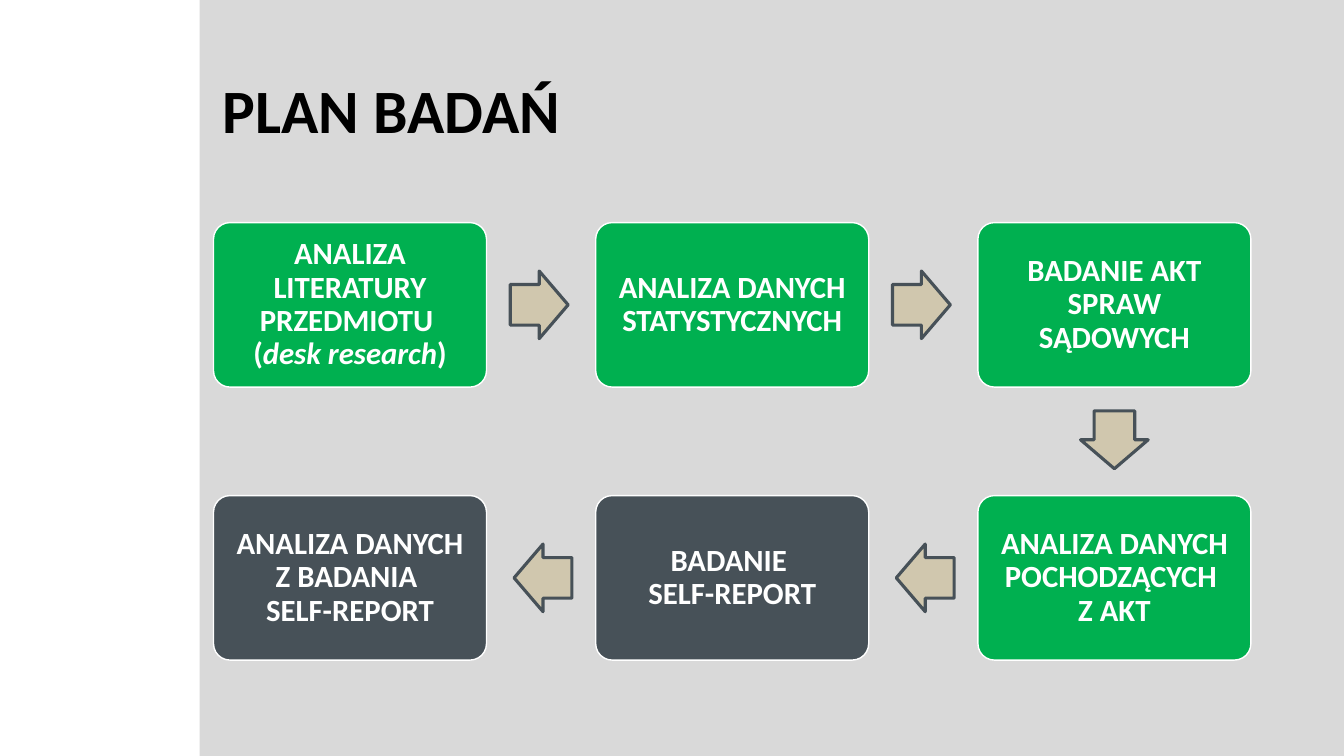
"""Build the research plan slide: six steps in a winding flow."""
from itertools import pairwise

from pptx import Presentation
from pptx.dml.color import RGBColor
from pptx.enum.shapes import MSO_SHAPE
from pptx.enum.text import MSO_ANCHOR, MSO_AUTO_SIZE, PP_ALIGN
from pptx.util import Pt

TITLE = "PLAN BADAŃ"
GREEN, SLATE, SAND = "00B050", "475158", "D0C7AE"
WHITE, BLACK, GREY = "FFFFFF", "000000", "D9D9D9"
ITALIC = "desk research"
STEPS = [
    (0, 0, GREEN, ["ANALIZA LITERATURY PRZEDMIOTU ", "\n", "(", ITALIC, ")"]),
    (1, 0, GREEN, ["ANALIZA DANYCH STATYSTYCZNYCH"]),
    (2, 0, GREEN, ["BADANIE AKT SPRAW SĄDOWYCH"]),
    (2, 1, GREEN, ["ANALIZA DANYCH POCHODZĄCYCH ", "\n", "Z AKT"]),
    (1, 1, SLATE, ["BADANIE ", "\n", "SELF-REPORT"]),
    (0, 1, SLATE, ["ANALIZA DANYCH Z BADANIA ", "\n", "SELF-REPORT"]),
]

PAGE_WIDTH, PAGE_HEIGHT, PANEL_LEFT = 960, 540, 142.6
LEFT, TOP, COLUMN_STEP, ROW_STEP = 152.5, 159, 273, 195
BOX_WIDTH, BOX_HEIGHT = 195, 117.5
ARROW_LENGTH, ARROW_WIDTH, ARROW_GAP = 41.3, 48.3, 17
ROTATIONS = {(1, 0): 0, (0, 1): 90, (-1, 0): 180}


def color(value):
    return RGBColor.from_string(value)


def add_block(page, kind, left, top, width, height, fill, line=None, weight=1):
    block = page.shapes.add_shape(kind, Pt(left), Pt(top), Pt(width), Pt(height))
    block.shadow.inherit = False
    block.fill.solid()
    block.fill.fore_color.rgb = color(fill)
    if line:
        block.line.color.rgb = color(line)
        block.line.width = Pt(weight)
    else:
        block.line.fill.background()
    return block


def format_text(para, size, fill, align):
    para.alignment = align
    para.line_spacing = 0.9
    para.font.name = "Calibri"
    para.font.size = Pt(size)
    para.font.bold = True
    para.font.color.rgb = color(fill)


def add_title(page):
    title = page.shapes.title
    title.left, title.top, title.width, title.height = Pt(152), Pt(29), Pt(742), Pt(133)
    title.height = Pt(104)
    frame = title.text_frame
    frame.text = TITLE
    frame.auto_size = MSO_AUTO_SIZE.NONE
    frame.vertical_anchor = MSO_ANCHOR.MIDDLE
    format_text(frame.paragraphs[0], 44, BLACK, PP_ALIGN.LEFT)


def add_step(page, column, row, fill, spans):
    box = add_block(page, MSO_SHAPE.ROUNDED_RECTANGLE, LEFT + column * COLUMN_STEP,
                    TOP + row * ROW_STEP, BOX_WIDTH, BOX_HEIGHT, fill, WHITE)
    box.adjustments[0] = 0.1
    frame = box.text_frame
    frame.word_wrap = True
    frame.vertical_anchor = MSO_ANCHOR.MIDDLE
    frame.margin_left = frame.margin_right = Pt(6.5)
    frame.margin_top = frame.margin_bottom = Pt(6.5)
    para = frame.paragraphs[0]
    format_text(para, 22, WHITE, PP_ALIGN.CENTER)
    for text in spans:
        if text == "\n":
            para.add_line_break()
            continue
        span = para.add_run()
        span.text = text
        if text == ITALIC:
            span.font.italic = True


def add_arrow(page, start, end):
    column, row = start[:2]
    across, down = end[0] - column, end[1] - row
    reach = ARROW_GAP + ARROW_LENGTH / 2
    center_x = LEFT + column * COLUMN_STEP + BOX_WIDTH / 2 + across * (BOX_WIDTH / 2 + reach)
    center_y = TOP + row * ROW_STEP + BOX_HEIGHT / 2 + down * (BOX_HEIGHT / 2 + reach)
    arrow = add_block(page, MSO_SHAPE.RIGHT_ARROW, center_x - ARROW_LENGTH / 2,
                      center_y - ARROW_WIDTH / 2, ARROW_LENGTH, ARROW_WIDTH, SAND, SLATE, 2.25)
    arrow.adjustments[0], arrow.adjustments[1] = 0.6, 0.5
    arrow.rotation = ROTATIONS[across, down]


def main():
    deck = Presentation()
    deck.slide_width, deck.slide_height = Pt(PAGE_WIDTH), Pt(PAGE_HEIGHT)
    page = deck.slides.add_slide(deck.slide_layouts[5])
    panel = add_block(page, MSO_SHAPE.RECTANGLE, PANEL_LEFT, 0,
                      PAGE_WIDTH - PANEL_LEFT, PAGE_HEIGHT, GREY)
    page.shapes.title.element.addprevious(panel.element)
    add_title(page)
    for step in STEPS:
        add_step(page, *step)
    for start, end in pairwise(STEPS):
        add_arrow(page, start, end)
    deck.save("out.pptx")


if __name__ == "__main__":
    main()
